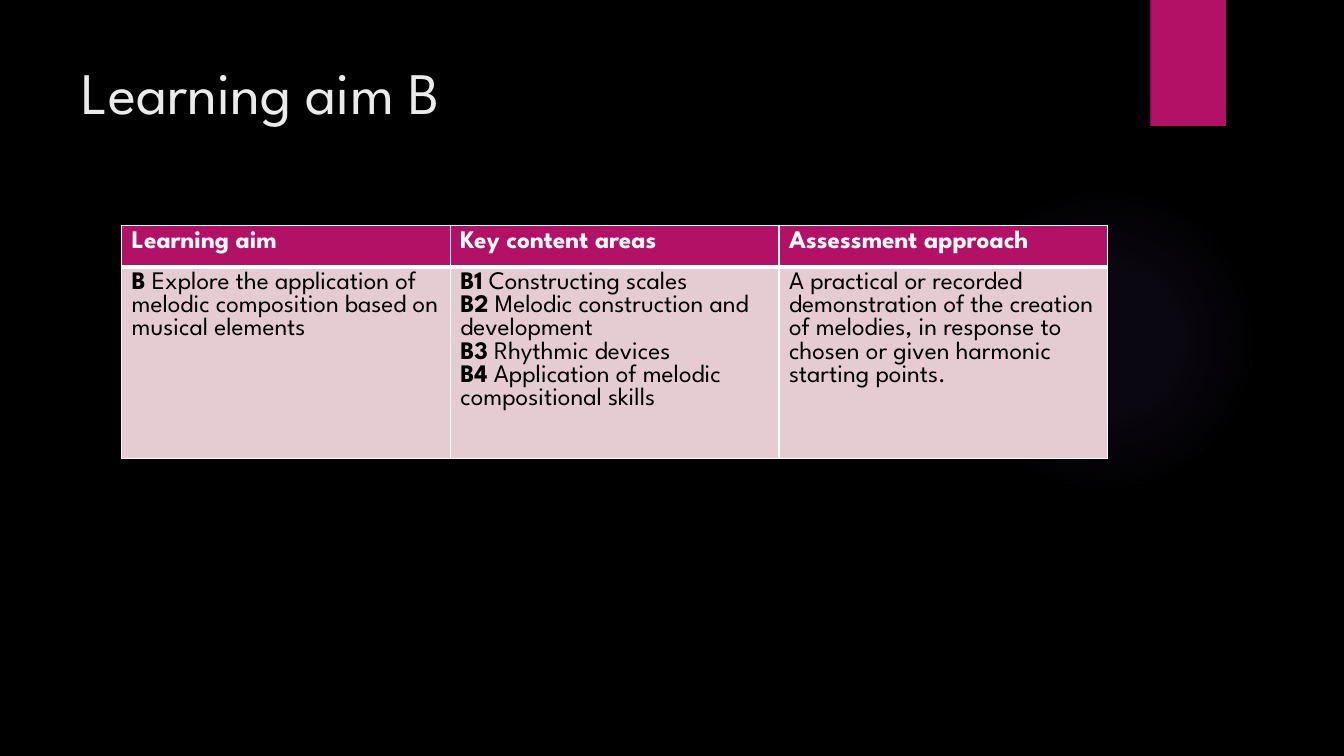
from dataclasses import dataclass

from lxml import etree
from pptx import Presentation
from pptx import util as u
from pptx.dml.color import RGBColor
from pptx.enum import shapes, text
from pptx.oxml import parse_xml
from pptx.oxml.ns import nsdecls, qn

WIDTH, HEIGHT = u.Inches(13.33), u.Inches(7.5)
FONT = "League Spartan"
BLACK = RGBColor(0x00, 0x00, 0x00)
WHITE = RGBColor(0xFF, 0xFF, 0xFF)
OFF_WHITE = RGBColor(0xEB, 0xEB, 0xEB)
MAGENTA = RGBColor(0xB3, 0x11, 0x66)
PALE_PINK = RGBColor(0xE5, 0xCC, 0xD3)
VIOLET = RGBColor(0x9B, 0x6B, 0xF2)
GLOW_STOPS = ((0, 7), (36, 6), (69, 0))


@dataclass(frozen=True)
class Area:
    left: float
    top: float
    width: float
    height: float

    def box(self) -> tuple[int, int, int, int]:
        return (
            round(self.left / 100 * WIDTH),
            round(self.top / 100 * HEIGHT),
            round(self.width / 100 * WIDTH),
            round(self.height / 100 * HEIGHT),
        )


@dataclass(frozen=True)
class Line:
    words: str
    code: str = ""


@dataclass(frozen=True)
class Column:
    heading: str
    lines: tuple[Line, ...]


GLOW = Area(70.59, 24.4, 23.11, 41.07)
TAB = Area(85.6, 0, 5.63, 16.67)
TITLE = Area(5.33, 6.67, 77.19, 20.4)
TABLE = Area(9.05, 29.87, 73.37, 25.2)
HEADER_SHARE = 0.215

COLUMNS = (
    Column("Learning aim", (
        Line(" Explore the application of melodic composition based on musical elements", "B"),
    )),
    Column("Key content areas", (
        Line(" Constructing scales", "B1"),
        Line(" Melodic construction and development", "B2"),
        Line(" Rhythmic devices", "B3"),
        Line(" Application of melodic compositional skills", "B4"),
    )),
    Column("Assessment approach", (
        Line("A practical or recorded"),
        Line("demonstration of the creation of melodies, in response to "
             "chosen or given harmonic starting points."),
    )),
)


def add_plain_shape(page, kind, area: Area, colour: RGBColor):
    shape = page.shapes.add_shape(kind, *area.box())
    shape.shadow.inherit = False
    shape.fill.solid()
    shape.fill.fore_color.rgb = colour
    shape.line.fill.background()
    return shape


def add_glow(page) -> None:
    glow = add_plain_shape(page, shapes.MSO_SHAPE.OVAL, GLOW, VIOLET)
    stops = "".join(
        f'<a:gs pos="{place * 1000}"><a:srgbClr val="{VIOLET}">'
        f'<a:alpha val="{opacity * 1000}"/></a:srgbClr></a:gs>'
        for place, opacity in GLOW_STOPS
    )
    gradient = parse_xml(
        f'<a:gradFill {nsdecls("a")}><a:gsLst>{stops}</a:gsLst><a:path path="circle">'
        '<a:fillToRect l="50000" t="50000" r="50000" b="50000"/></a:path></a:gradFill>'
    )
    properties = glow.element.spPr
    properties.replace(properties.find(qn("a:solidFill")), gradient)


def style_para(para, size: float, colour: RGBColor) -> None:
    para.font.name = FONT
    para.font.size = u.Pt(size)
    para.font.color.rgb = colour


def add_title(page, words: str) -> None:
    frame = page.shapes.add_textbox(*TITLE.box()).text_frame
    frame.word_wrap = True
    frame.vertical_anchor = text.MSO_ANCHOR.TOP
    frame.text = words
    style_para(frame.paragraphs[0], 42, OFF_WHITE)


def style_cell(cell, fill: RGBColor, top: float, bottom: float) -> None:
    properties = cell._tc.get_or_add_tcPr()
    for side, points in (("L", 1), ("R", 1), ("T", top), ("B", bottom)):
        border = etree.SubElement(properties, qn(f"a:ln{side}"), w=str(u.Pt(points)))
        solid = etree.SubElement(border, qn("a:solidFill"))
        etree.SubElement(solid, qn("a:srgbClr"), val=str(WHITE))
    cell.fill.solid()
    cell.fill.fore_color.rgb = fill


def fill_heading(cell, heading: str) -> None:
    style_cell(cell, MAGENTA, 1, 3)
    cell.text = heading
    para = cell.text_frame.paragraphs[0]
    style_para(para, 18, WHITE)
    para.font.bold = True


def fill_body(cell, lines: tuple[Line, ...]) -> None:
    style_cell(cell, PALE_PINK, 3, 1)
    frame = cell.text_frame
    for index, line in enumerate(lines):
        para = frame.add_paragraph() if index else frame.paragraphs[0]
        style_para(para, 18, BLACK)
        if line.code:
            span = para.add_run()
            span.text = line.code
            span.font.bold = True
        para.add_run().text = line.words


def add_aim_table(page) -> None:
    left, top, width, height = TABLE.box()
    table = page.shapes.add_table(2, len(COLUMNS), left, top, width, height).table
    table.horz_banding = False
    table.rows[0].height = round(height * HEADER_SHARE)
    table.rows[1].height = height - table.rows[0].height
    for index, column in enumerate(COLUMNS):
        table.columns[index].width = width // len(COLUMNS)
        fill_heading(table.cell(0, index), column.heading)
        fill_body(table.cell(1, index), column.lines)


def main() -> None:
    deck = Presentation()
    deck.slide_width, deck.slide_height = WIDTH, HEIGHT
    page = deck.slides.add_slide(deck.slide_layouts[6])
    page.background.fill.solid()
    page.background.fill.fore_color.rgb = BLACK
    add_glow(page)
    add_plain_shape(page, shapes.MSO_SHAPE.RECTANGLE, TAB, MAGENTA)
    add_title(page, "Learning aim B")
    add_aim_table(page)
    deck.save("out.pptx")


if __name__ == "__main__":
    main()
